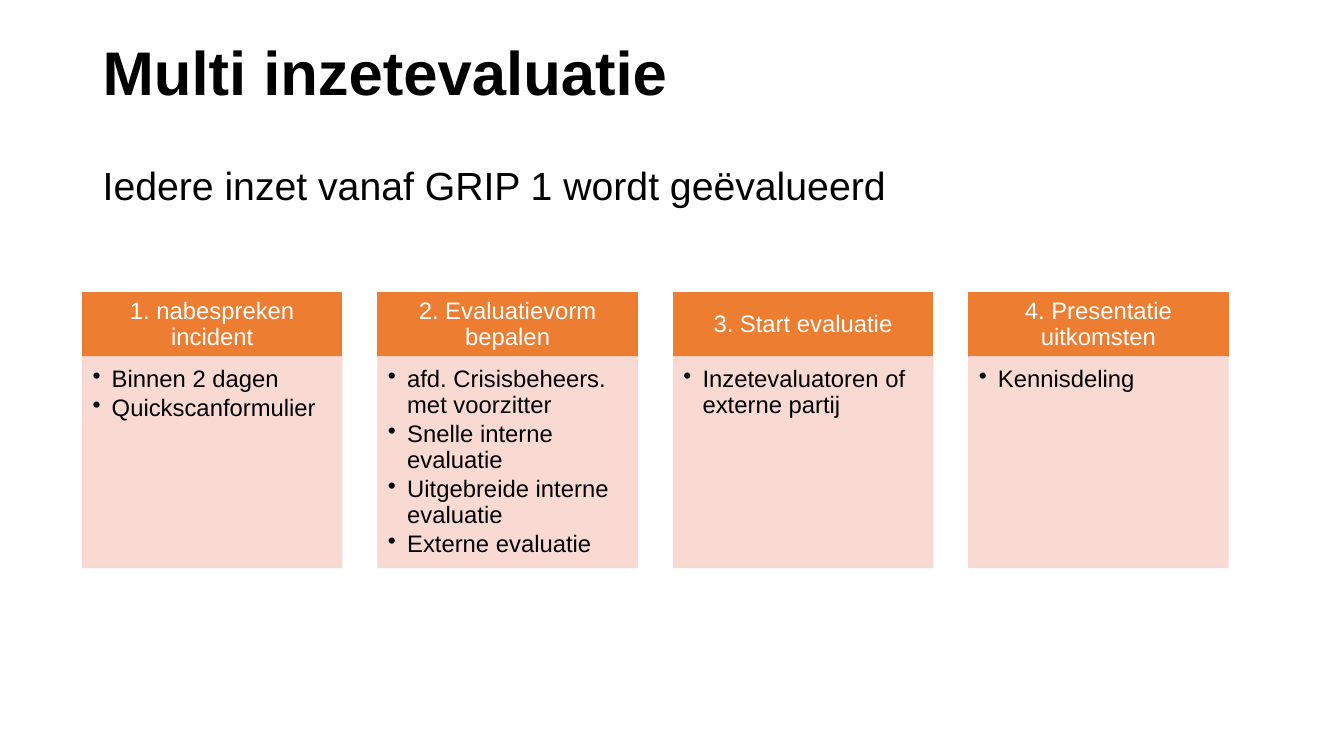
import pptx
import pptx.dml.color
import pptx.enum.shapes
import pptx.enum.text
import pptx.oxml.ns
import pptx.util
from lxml import etree

Inches, Pt = pptx.util.Inches, pptx.util.Pt
PP_ALIGN = pptx.enum.text.PP_ALIGN
ANCHOR = pptx.enum.text.MSO_ANCHOR
qn = pptx.oxml.ns.qn

ORANGE, PINK, BLACK, WHITE = "ED7D31", "F8D7CE", "000000", "FFFFFF"
STEPS = [
    ("1. nabespreken incident", ["Binnen 2 dagen", "Quickscanformulier"]),
    ("2. Evaluatievorm bepalen",
     ["afd. Crisisbeheers. met voorzitter", "Snelle interne evaluatie",
      "Uitgebreide interne evaluatie", "Externe evaluatie"]),
    ("3. Start evaluatie", ["Inzetevaluatoren of externe partij"]),
    ("4. Presentatie uitkomsten", ["Kennisdeling"]),
]


def rgb(value):
    return pptx.dml.color.RGBColor.from_string(value)


def write(sp, lines, size, color, align=PP_ALIGN.LEFT, anchor=ANCHOR.TOP,
          insets=(0.1, 0.05, 0.1, 0.05), bold=False, after=0):
    tf = sp.text_frame
    tf.text = "\n".join(lines)
    tf.word_wrap = True
    tf.vertical_anchor = anchor
    (tf.margin_left, tf.margin_top,
     tf.margin_right, tf.margin_bottom) = map(Inches, insets)
    for p in tf.paragraphs:
        p.alignment = align
        p.line_spacing = 0.9
        p.space_after = Pt(after)
        for r in p.runs:
            r.font.name = "Arial"
            r.font.size = Pt(size)
            r.font.bold = bold
            r.font.color.rgb = rgb(color)


def add_bullets(tf, indent):
    for p in tf.paragraphs:
        pPr = p._p.get_or_add_pPr()
        pPr.set("marL", str(Inches(indent)))
        pPr.set("indent", str(-Inches(indent)))
        etree.SubElement(pPr, qn("a:buChar")).set("char", "•")


def add_block(s, left, top, width, height, color, opacity=100):
    sp = s.shapes.add_shape(pptx.enum.shapes.MSO_SHAPE.RECTANGLE,
                            *map(Inches, (left, top, width, height)))
    sp.shadow.inherit = False
    sp.fill.solid()
    sp.fill.fore_color.rgb = rgb(color)
    sp.line.color.rgb = rgb(color)
    sp.line.width = Pt(1)
    if opacity < 100:
        for clr in sp._element.spPr.iter(qn("a:srgbClr")):
            etree.SubElement(clr, qn("a:alpha")).set("val", str(opacity * 1000))
    return sp


def add_heading(s, left, top, width):
    # Title
    sp = s.shapes.add_textbox(*map(Inches, (left, top, width, 1.45)))
    write(sp, ["Multi inzetevaluatie"], 44, BLACK, anchor=ANCHOR.MIDDLE, bold=True)
    # Introductory sentence
    sp = s.shapes.add_textbox(*map(Inches, (left, top + 1.58, width, 1.13)))
    write(sp, ["Iedere inzet vanaf GRIP 1 wordt geëvalueerd"], 28, BLACK)


def add_step(s, left, top, width, height, title, points):
    head = 0.64
    # Step name
    sp = add_block(s, left, top, width, head, ORANGE)
    write(sp, [title], 17, WHITE, PP_ALIGN.CENTER, ANCHOR.MIDDLE,
          (0.13, 0.08, 0.13, 0.08))
    # Step details
    sp = add_block(s, left, top + head, width, height - head, PINK, opacity=90)
    write(sp, points, 17, BLACK, insets=(0.1, 0.1, 0.13, 0.15), after=2.55)
    add_bullets(sp.text_frame, 0.19)


def add_steps(s, left, top, width, height, gap):
    step_width = (width - gap * (len(STEPS) - 1)) / len(STEPS)
    for i, (title, points) in enumerate(STEPS):
        add_step(s, left + i * (step_width + gap), top, step_width, height,
                 title, points)


def main():
    prs = pptx.Presentation()
    prs.slide_width, prs.slide_height = Inches(13.33), Inches(7.5)
    s = prs.slides.add_slide(prs.slide_layouts[6])
    add_heading(s, 0.92, 0.02, 11.5)
    add_steps(s, 0.82, 2.9, 11.36, 2.73, gap=0.36)
    prs.save("out.pptx")


if __name__ == "__main__":
    main()
